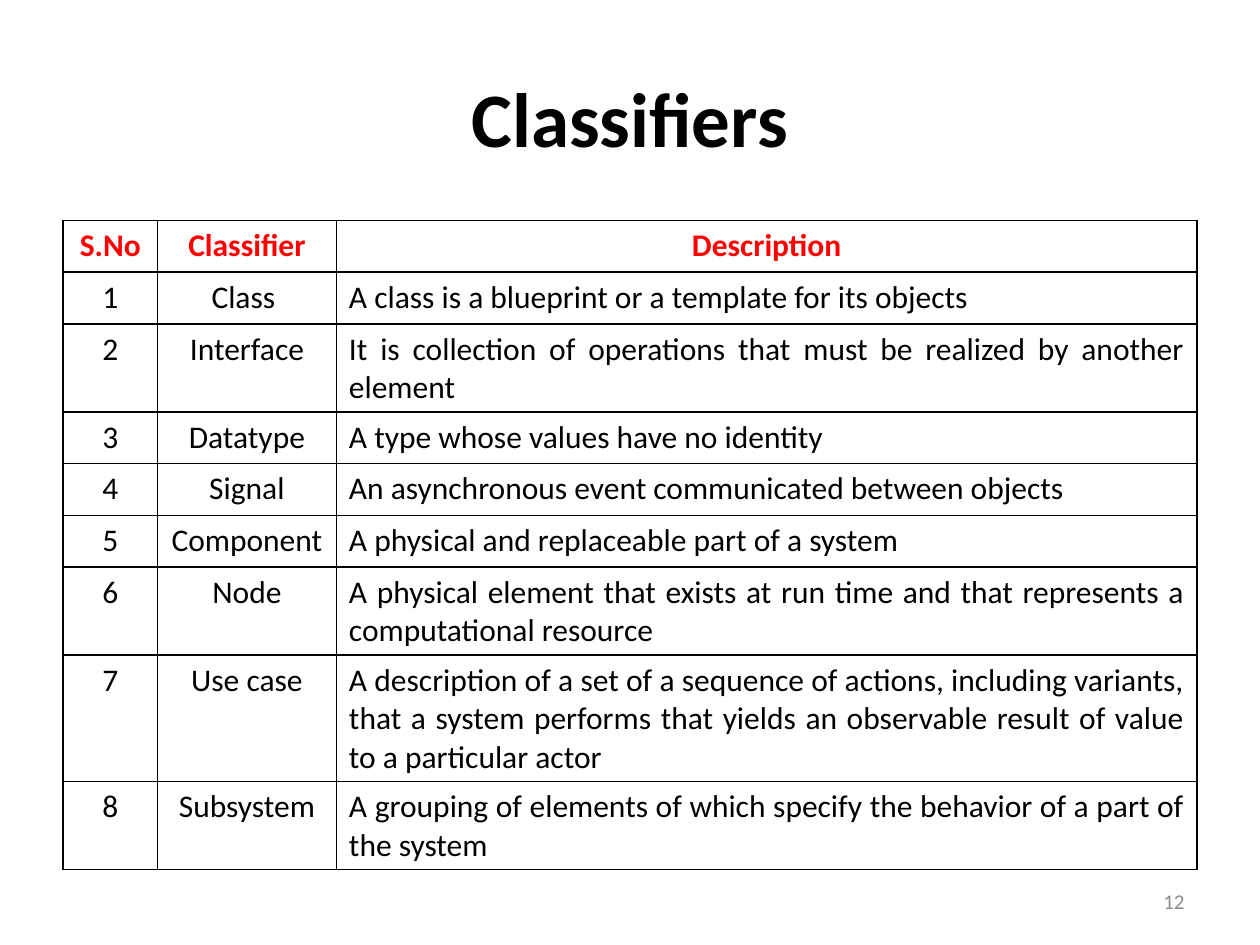
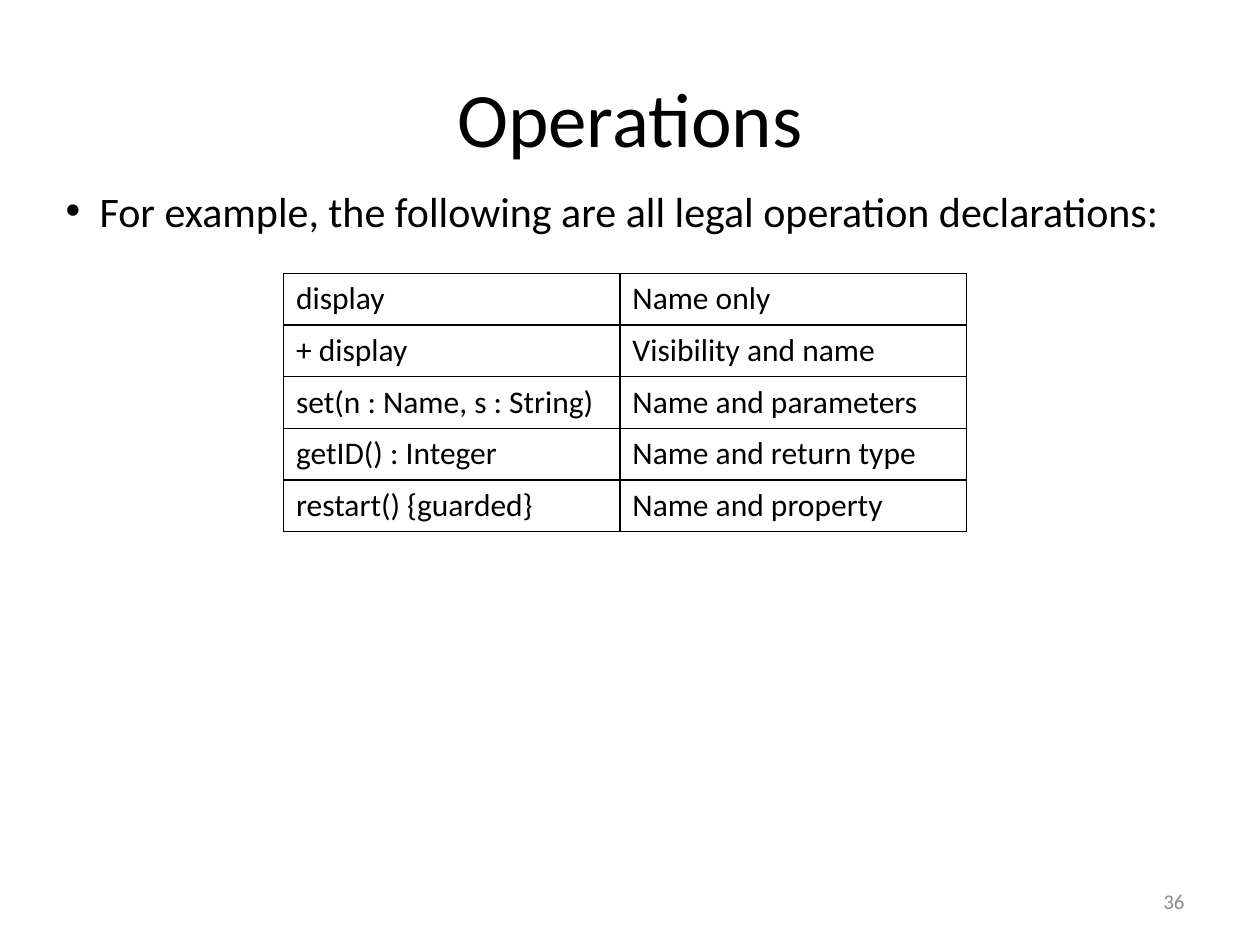
from lxml import etree
from pptx import Presentation
from pptx.dml.color import RGBColor
from pptx.enum.text import MSO_ANCHOR, MSO_AUTO_SIZE, PP_ALIGN
from pptx.oxml.ns import qn
from pptx.util import Inches, Pt

LEFT, CENTER, RIGHT, JUSTIFY = PP_ALIGN.LEFT, PP_ALIGN.CENTER, PP_ALIGN.RIGHT, PP_ALIGN.JUSTIFY
MIDDLE = MSO_ANCHOR.MIDDLE
NO_FIT = MSO_AUTO_SIZE.NONE

TITLE_AND_BODY, TITLE_ONLY = 1, 5
FONT = "Calibri"
BLACK, RED, GRAY = "000000", "FF0000", "8C8C8C"
ROW_HEIGHT = 0.41

CLASSIFIERS = [
    ("S.No", "Classifier", "Description"),
    ("1", "Class ", "A class is a blueprint or a template for its objects"),
    ("2", "Interface", "It is collection of operations that must be realized by another element"),
    ("3", "Datatype", "A type whose values have no identity"),
    ("4", "Signal", "An asynchronous event communicated between objects"),
    ("5", "Component", "A physical and replaceable part of a system"),
    ("6", "Node", "A physical element that exists at run time and that represents "
                  "a computational resource"),
    ("7", "Use case", "A description of a set of a sequence of actions, including variants, "
                      "that a system performs that yields an observable result of value "
                      "to a particular actor"),
    ("8", "Subsystem", "A grouping of elements of which specify the behavior of a part of the system"),
]

OPERATIONS = [
    ("display", "Name only"),
    ("+ display", "Visibility and name"),
    ("set(n : Name, s : String)", "Name and parameters"),
    ("getID() : Integer", "Name and return type"),
    ("restart() {guarded}", "Name and property"),
]


def rgb(color):
    return RGBColor.from_string(color)


class Slides:
    def __init__(self):
        self.deck = Presentation()
        self.deck.slide_width, self.deck.slide_height = Inches(10), Inches(7.5)
        self.page = None

    def set_text(self, frame, text, size, color=BLACK, align=LEFT, bold=False):
        para = frame.paragraphs[0]
        para.text = text
        para.alignment = align
        para.font.name = FONT
        para.font.size = Pt(size)
        para.font.bold = bold
        para.font.color.rgb = rgb(color)
        return para

    def place(self, shape, left, top, width, height):
        shape.left, shape.top = Inches(left), Inches(top)
        shape.width, shape.height = Inches(width), Inches(height)

    def start(self, layout, title, number, bold=False):
        self.page = self.deck.slides.add_slide(self.deck.slide_layouts[layout])
        heading = self.page.shapes.title
        self.place(heading, 0.5, 0.3, 9, 1.25)
        heading.text_frame.vertical_anchor = MIDDLE
        self.set_text(heading.text_frame, title, 44, align=CENTER, bold=bold)
        self.page_number(number)

    def page_number(self, number):
        box = self.page.shapes.add_textbox(Inches(7.17), Inches(6.95), Inches(2.33), Inches(0.4))
        box.text_frame.word_wrap = True
        box.text_frame.vertical_anchor = MIDDLE
        self.set_text(box.text_frame, str(number), 12, GRAY, RIGHT)

    def bullet(self, text, left, top, width, height):
        body = self.page.placeholders[1]
        self.place(body, left, top, width, height)
        body.text_frame.auto_size = NO_FIT
        para = self.set_text(body.text_frame, text, 24)
        para.space_before = Pt(0)
        properties = para._p.get_or_add_pPr()
        properties.set("marL", str(Inches(0.27)))
        properties.set("indent", str(Inches(-0.27)))

    def border(self, cell):
        properties = cell._tc.get_or_add_tcPr()
        for side in ("lnL", "lnR", "lnT", "lnB"):
            line = etree.SubElement(properties, qn(f"a:{side}"), w=str(Pt(1)))
            fill = etree.SubElement(line, qn("a:solidFill"))
            etree.SubElement(fill, qn("a:srgbClr"), val=BLACK)

    def table(self, rows, left, top, widths, aligns, header=False):
        table = self.page.shapes.add_table(
            len(rows), len(widths), Inches(left), Inches(top),
            Inches(sum(widths)), Inches(ROW_HEIGHT * len(rows))).table
        table.first_row = header
        table.horz_banding = False
        for column, width in zip(table.columns, widths):
            column.width = Inches(width)
        for row_index, texts in enumerate(rows):
            table.rows[row_index].height = Inches(ROW_HEIGHT)
            heading = header and row_index == 0
            for column_index, text in enumerate(texts):
                cell = table.cell(row_index, column_index)
                self.border(cell)
                cell.fill.background()
                self.set_text(cell.text_frame, text, 18, RED if heading else BLACK,
                              CENTER if heading else aligns[column_index], heading)


def main():
    slides = Slides()

    slides.start(TITLE_ONLY, "Classifiers", 12, bold=True)
    slides.table(CLASSIFIERS, 0.5, 1.75, (0.75, 1.42, 6.83), (CENTER, CENTER, JUSTIFY), header=True)

    slides.start(TITLE_AND_BODY, "Operations", 36)
    slides.bullet("For example, the following are all legal operation declarations:",
                  0.42, 1.42, 9.08, 0.5)
    slides.table(OPERATIONS, 2.25, 2.17, (2.67, 2.75), (LEFT, LEFT))

    slides.deck.save("out.pptx")


if __name__ == "__main__":
    main()
